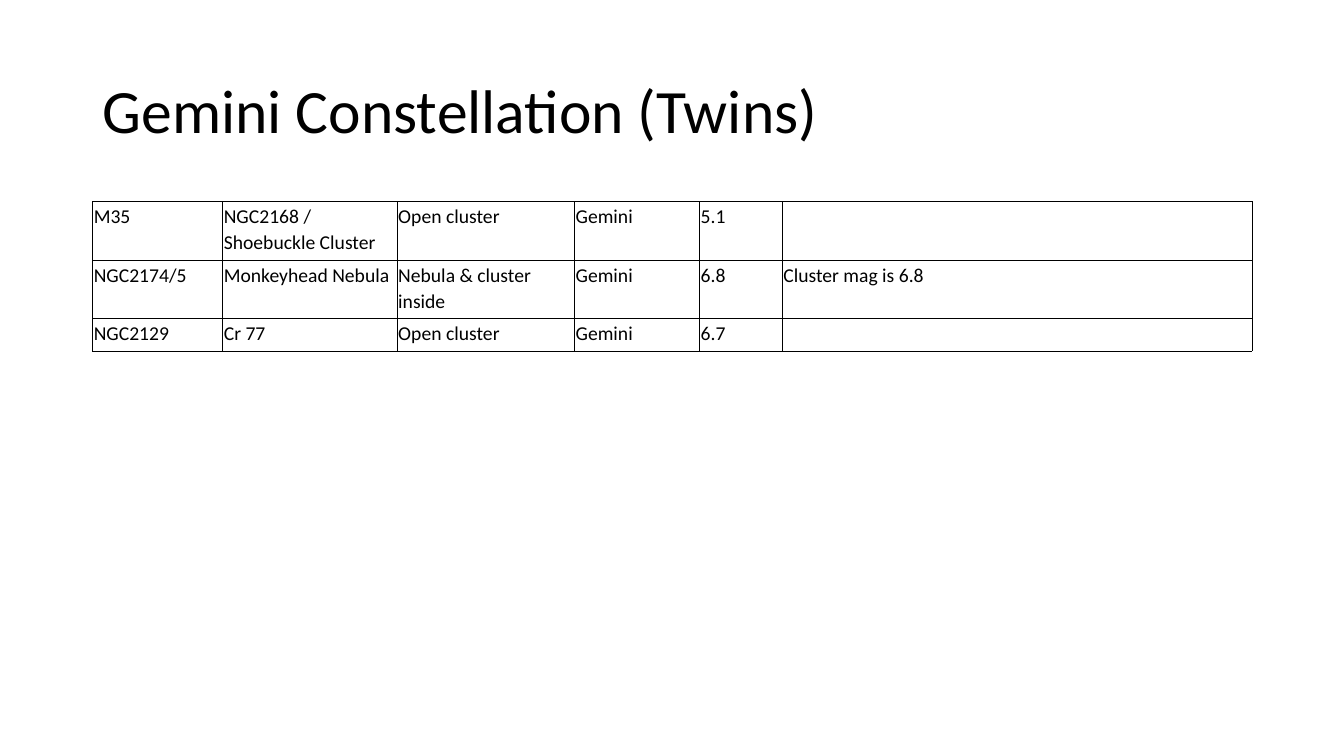
from dataclasses import dataclass

from lxml.etree import SubElement
from pptx import Presentation
from pptx.dml.color import RGBColor
from pptx.enum.text import MSO_ANCHOR as Anchor, MSO_AUTO_SIZE as AutoSize, PP_ALIGN as Align
from pptx.oxml.ns import qn
from pptx.util import Inches, Pt


@dataclass(frozen=True)
class Theme:
    """Colours, font and type sizes of the slide."""
    ink: str = "000000"
    font: str = "Calibri"
    title_size: int = 44
    table_size: int = 14
    rule_width: float = 0.5


THEME = Theme()
SLIDE_WIDTH, SLIDE_HEIGHT = 13.33, 7.5
MARGIN = 0.92
CONTENT_WIDTH = 11.5
COLUMN_WIDTHS = (1.29, 1.73, 1.76, 1.24, 0.82, 4.66)
ROW_HEIGHTS = (0.42, 0.21, 0.21)
OBJECTS = (
    ("M35", "NGC2168 / Shoebuckle Cluster", "Open cluster", "Gemini", "5.1", ""),
    ("NGC2174/5", "Monkeyhead Nebula", "Nebula & cluster inside", "Gemini", "6.8",
     "Cluster mag is 6.8"),
    ("NGC2129", "Cr 77", "Open cluster", "Gemini", "6.7", ""),
)


def format_paragraph(paragraph, size, spacing):
    """Apply the theme's type to a paragraph and its runs."""
    paragraph.alignment = Align.LEFT
    paragraph.line_spacing = spacing
    for run in paragraph.runs:
        run.font.size = Pt(size)
        run.font.name = THEME.font
        run.font.color.rgb = RGBColor.from_string(THEME.ink)
    if not paragraph.runs:
        SubElement(paragraph._p, qn("a:endParaRPr"), sz=str(size * 100))


def add_title(slide, text, left, top, width, height):
    """Place the title placeholder in its box."""
    title = slide.shapes.title
    title.left, title.top = Inches(left), Inches(top)
    title.width, title.height = Inches(width), Inches(height)
    frame = title.text_frame
    frame.text = text
    frame.auto_size = AutoSize.NONE
    frame.vertical_anchor = Anchor.MIDDLE
    format_paragraph(frame.paragraphs[0], THEME.title_size, 0.9)


def add_borders(cell):
    """Draw a thin rule on each side of a cell."""
    properties = cell._tc.get_or_add_tcPr()
    for position, side in enumerate(("a:lnL", "a:lnR", "a:lnT", "a:lnB")):
        rule = properties.makeelement(qn(side), {"w": str(Pt(THEME.rule_width))})
        fill = SubElement(rule, qn("a:solidFill"))
        SubElement(fill, qn("a:srgbClr"), val=THEME.ink)
        properties.insert(position, rule)


def fill_cell(cell, text):
    """Write one plain, ruled table cell."""
    cell.text_frame.text = text
    cell.margin_left = cell.margin_right = cell.margin_top = Inches(0.01)
    cell.margin_bottom = Inches(0.05)
    cell.vertical_anchor = Anchor.TOP
    cell.fill.background()
    add_borders(cell)
    format_paragraph(cell.text_frame.paragraphs[0], THEME.table_size, 1.1)


def add_object_table(slide, objects, left, top, width):
    """Place the table of deep-sky objects across the given width."""
    table = slide.shapes.add_table(
        len(objects), len(COLUMN_WIDTHS), Inches(left), Inches(top),
        Inches(width), Inches(sum(ROW_HEIGHTS))).table
    table.first_row = table.horz_banding = False
    for column, share in zip(table.columns, COLUMN_WIDTHS):
        column.width = Inches(width * share / sum(COLUMN_WIDTHS))
    for row, height, values in zip(table.rows, ROW_HEIGHTS, objects):
        row.height = Inches(height)
        for cell, value in zip(row.cells, values):
            fill_cell(cell, value)


def main():
    """Build and save the presentation."""
    deck = Presentation()
    deck.slide_width, deck.slide_height = Inches(SLIDE_WIDTH), Inches(SLIDE_HEIGHT)
    slide = deck.slides.add_slide(deck.slide_layouts.get_by_name("Title Only"))
    add_title(slide, "Gemini Constellation (Twins)", MARGIN, 0.4, CONTENT_WIDTH, 1.45)
    add_object_table(slide, OBJECTS, MARGIN, 2, CONTENT_WIDTH)
    deck.save("out.pptx")


if __name__ == "__main__":
    main()
